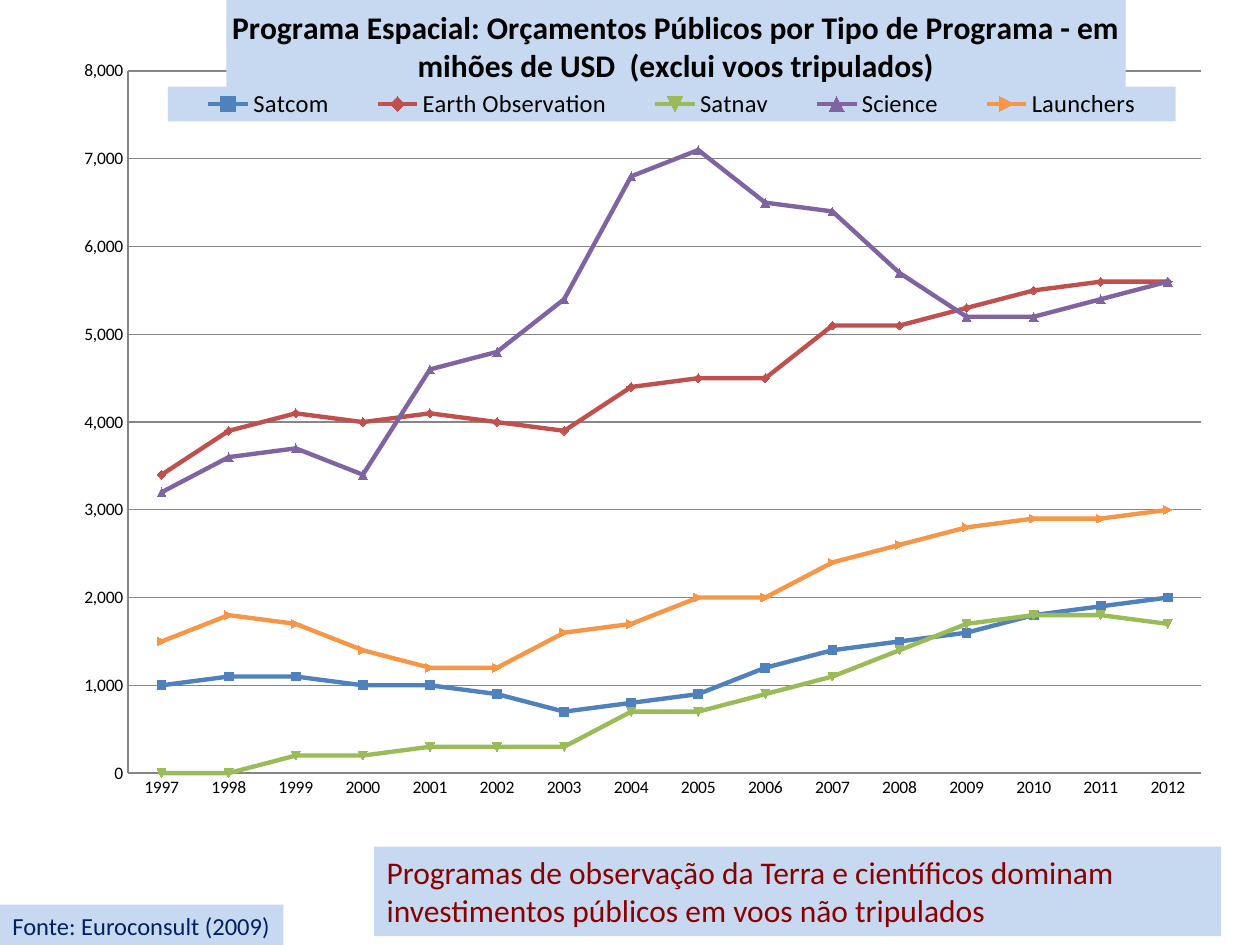
from pptx import Presentation
from pptx.chart.data import CategoryChartData as Data
from pptx.dml.color import RGBColor as RGB
from pptx.enum.chart import XL_CHART_TYPE as Kind, XL_LEGEND_POSITION as Pos, XL_TICK_MARK as Tick
from pptx.enum.shapes import MSO_SHAPE as Form
from pptx.enum.text import MSO_ANCHOR as Anchor, PP_ALIGN as Align
from pptx.oxml import parse_xml
from pptx.oxml.ns import nsdecls, qn
from pptx.util import Inches, Pt

BLACK = RGB(0, 0, 0)
GREY = RGB(0x86, 0x86, 0x86)
PALE = RGB(0xC6, 0xD9, 0xF1)
NAVY = RGB(0x00, 0x20, 0x60)
WINE = RGB(0x8A, 0x00, 0x00)
BLUE = RGB(0x4F, 0x81, 0xBD)
RED = RGB(0xC0, 0x50, 0x4D)
GREEN = RGB(0x9B, 0xBB, 0x59)
PLUM = RGB(0x80, 0x64, 0xA2)
GOLD = RGB(0xF7, 0x96, 0x46)

TITLE = ("Programa Espacial: Orçamentos Públicos por Tipo de Programa - em "
         "mihões de USD  (exclui voos tripulados)")
YEARS = range(1997, 2013)
SERIES = [
    ("Satcom", BLUE, [1000, 1100, 1100, 1000, 1000, 900, 700, 800,
                      900, 1200, 1400, 1500, 1600, 1800, 1900, 2000]),
    ("Earth Observation", RED, [3400, 3900, 4100, 4000, 4100, 4000, 3900, 4400,
                                4500, 4500, 5100, 5100, 5300, 5500, 5600, 5600]),
    ("Satnav", GREEN, [0, 0, 200, 200, 300, 300, 300, 700,
                       700, 900, 1100, 1400, 1700, 1800, 1800, 1700]),
    ("Science", PLUM, [3200, 3600, 3700, 3400, 4600, 4800, 5400, 6800,
                       7100, 6500, 6400, 5700, 5200, 5200, 5400, 5600]),
    ("Launchers", GOLD, [1500, 1800, 1700, 1400, 1200, 1200, 1600, 1700,
                         2000, 2000, 2400, 2600, 2800, 2900, 2900, 3000]),
]


class Deck:
    def __init__(self):
        self.prs = Presentation()
        self.prs.slide_width, self.prs.slide_height = Inches(10), Inches(7.5)
        self.slide = self.prs.slides.add_slide(self.prs.slide_layouts[6])

    def style(self, font, size, color, bold=False):
        font.name, font.size, font.bold = "Calibri", Pt(size), bold
        font.color.rgb = color

    def place(self, node, index, inner=False, **spots):
        for old in node.findall(qn("c:layout")):
            node.remove(old)
        target = '<c:layoutTarget val="inner"/>' if inner else ""
        modes = "".join(f'<c:{k}Mode val="edge"/>' for k in "xy")
        sizes = "".join(f'<c:{k} val="{v}"/>' for k, v in spots.items())
        node.insert(index, parse_xml(
            f'<c:layout {nsdecls("c")}><c:manualLayout>{target}{modes}{sizes}'
            '</c:manualLayout></c:layout>'))

    def axis(self, axis):
        axis.major_tick_mark = axis.minor_tick_mark = Tick.NONE
        axis.format.line.color.rgb = GREY
        self.style(axis.tick_labels.font, 10, BLACK)

    def legend(self, chart):
        chart.has_legend = True
        key = chart.legend
        key.position, key.include_in_layout = Pos.BOTTOM, False
        self.style(key.font, 14, BLACK)
        node = key._element
        self.place(node, 1, x=0.11, y=0.1, w=0.86, h=0.04)
        node.find(qn("c:overlay")).addnext(parse_xml(
            f'<c:spPr {nsdecls("c", "a")}><a:solidFill><a:srgbClr val="{PALE}"/>'
            '</a:solidFill></c:spPr>'))

    def title(self, chart, text):
        head = chart.chart_title
        para = head.text_frame.paragraphs[0]
        para.text = text
        self.style(para.font, 18, BLACK, True)
        head.format.fill.solid()
        head.format.fill.fore_color.rgb = PALE
        self.place(head._element, 1, x=0.16, y=0)

    def chart(self, left, top, width, height):
        data = Data(number_format="#,##0")
        data.categories = YEARS
        for name, _, vals in SERIES:
            data.add_series(name, vals)
        chart = self.slide.shapes.add_chart(
            Kind.LINE_MARKERS, Inches(left), Inches(top),
            Inches(width), Inches(height), data).chart
        self.style(chart.font, 10, BLACK)
        plot = chart.plots[0]
        plot.vary_by_categories = False
        for line, (_, color, _) in zip(plot.series, SERIES):
            line.smooth = False
            line.format.line.color.rgb = color
            line.format.line.width = Pt(2.5)
        self.axis(chart.category_axis)
        scale = chart.value_axis
        self.axis(scale)
        scale.minimum_scale, scale.maximum_scale, scale.major_unit = 0, 8000, 1000
        scale.tick_labels.number_format = "#,##0"
        scale.tick_labels.number_format_is_linked = False
        scale.major_gridlines.format.line.color.rgb = GREY
        self.title(chart, TITLE)
        self.legend(chart)
        area = chart._chartSpace.find(f'{qn("c:chart")}/{qn("c:plotArea")}')
        self.place(area, 0, True, x=0.076, y=0.082, w=0.916, h=0.81)

    def note(self, left, top, width, height, text, size, color):
        box = self.slide.shapes.add_shape(
            Form.RECTANGLE, Inches(left), Inches(top), Inches(width), Inches(height))
        box.shadow.inherit = False
        box.fill.solid()
        box.fill.fore_color.rgb = PALE
        box.line.fill.background()
        frame = box.text_frame
        frame.word_wrap, frame.vertical_anchor = True, Anchor.TOP
        para = frame.paragraphs[0]
        para.text, para.alignment = text, Align.LEFT
        self.style(para.font, size, color)


def main():
    deck = Deck()
    deck.chart(0.31, 0, 9.3, 6.88)
    deck.note(0, 7.18, 2.25, 0.32, "Fonte: Euroconsult (2009)", 14, NAVY)
    deck.note(2.97, 6.72, 6.72, 0.71,
              "Programas de observação da Terra e científicos dominam "
              "investimentos públicos em voos não tripulados", 18, WINE)
    deck.prs.save("out.pptx")


if __name__ == "__main__":
    main()
